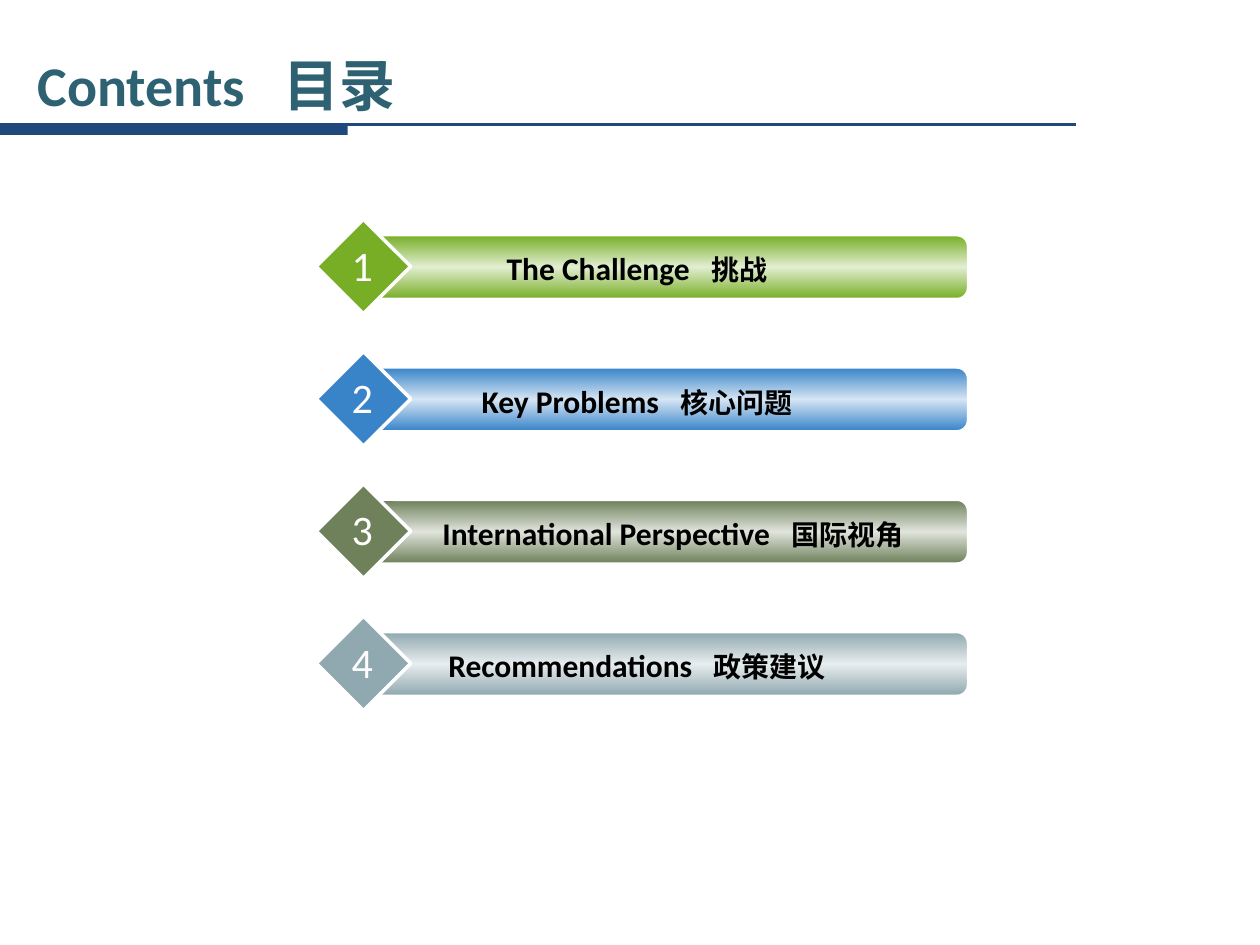
import copy

import pptx
import pptx.dml.color
import pptx.enum.shapes
import pptx.enum.text
import pptx.oxml.ns
import pptx.util
from pptx.util import Inches

SHAPE = pptx.enum.shapes.MSO_SHAPE
ALIGN = pptx.enum.text.PP_ALIGN
FONT = "Calibri"

# Content: English, Chinese, colour key, label width
TITLE = ("Contents", "目录")
TOPICS = [
    ("The Challenge", "挑战", "green", 3.75),
    ("Key Problems", "核心问题", "blue", 3.75),
    ("International Perspective", "国际视角", "olive", 4.32),
    ("Recommendations", "政策建议", "grey", 3.75),
]
COLORS = {
    "white": "FFFFFF", "black": "000000", "title": "2E6272", "rule": "1F497D",
    "green": "77AE26", "green_light": "E2EED1",
    "blue": "3984C9", "blue_light": "D5E5F4",
    "olive": "6E815B", "olive_light": "E0E4DC",
    "grey": "90A8B0", "grey_light": "E7EDEE",
}
FIRST_TOP, PITCH = 1.74, 1.05


def color(key):
    return pptx.dml.color.RGBColor.from_string(COLORS[key])


def style_run(run, size, key, bold):
    run.font.name = FONT
    run.font.size = pptx.util.Pt(size)
    run.font.bold = bold
    run.font.color.rgb = color(key)


def add_label(shapes, box, pieces, key, bold=False, align=ALIGN.CENTER, wrap=True):
    label = shapes.add_textbox(*map(Inches, box))
    frame = label.text_frame
    frame.word_wrap = wrap
    paragraph = frame.paragraphs[0]
    paragraph.alignment = align
    for text, size in pieces:
        run = paragraph.add_run()
        run.text = text
        style_run(run, size, key, bold)
        if text == " ":  # widen the gap between the two languages
            run.font._element.set("spc", str(round(size * 45)))
    return frame


def bilingual(english, chinese, size, chinese_size):
    return [(english, size), (" ", size), (chinese, chinese_size)]


def add_block(shapes, preset, box, line_width):
    block = shapes.add_shape(preset, *map(Inches, box))
    block.shadow.inherit = False
    block.line.color.rgb = color("white")
    block.line.width = pptx.util.Pt(line_width)
    return block


def fill_gradient(shape, keys):
    shape.fill.gradient()
    shape.fill.gradient_angle = 90
    stop_list = shape._element.spPr.find(".//" + pptx.oxml.ns.qn("a:gsLst"))
    stop_list.append(copy.deepcopy(stop_list[0]))
    for i, (stop, key) in enumerate(zip(shape.fill.gradient_stops, keys)):
        stop.position = i / 2
        stop.color.rgb = color(key)


def add_topic(slide, number, topic):
    english, chinese, key, label_width = topic
    top = FIRST_TOP + (number - 1) * PITCH
    shapes = slide.shapes.add_group_shape().shapes
    bar = add_block(shapes, SHAPE.ROUNDED_RECTANGLE, (2.93, top + 0.13, 4.75, 0.5), 1)
    bar.adjustments[0] = 0.17
    fill_gradient(bar, (key, key + "_light", key))
    diamond = add_block(shapes, SHAPE.DIAMOND, (2.51, top, 0.75, 0.75), 2)
    diamond.fill.solid()
    diamond.fill.fore_color.rgb = color(key)
    add_label(shapes, (3.18, top + 0.19, label_width, 0.4),
              bilingual(english, chinese, 18, 16), "black", bold=True)
    add_label(shapes, (2.68, top + 0.11, 0.39, 0.5), [(str(number), 24)],
              "white", wrap=False)


def add_header(slide):
    rule = slide.shapes.add_connector(
        pptx.enum.shapes.MSO_CONNECTOR.STRAIGHT,
        Inches(0), Inches(0.99), Inches(8.54), Inches(0.99))
    rule.line.color.rgb = color("rule")
    rule.line.width = pptx.util.Pt(1.5)
    rule._element.spPr.append(pptx.oxml.parse_xml(
        "<a:effectLst %s/>" % pptx.oxml.ns.nsdecls("a")))
    accent = slide.shapes.add_shape(
        SHAPE.RECTANGLE, Inches(0), Inches(0.99), Inches(2.76), Inches(0.08))
    accent.shadow.inherit = False
    accent.fill.solid()
    accent.fill.fore_color.rgb = color("rule")
    accent.line.fill.background()
    title = add_label(slide.shapes, (0.2, 0.36, 8.42, 0.62),
                      bilingual(*TITLE, 32, 32), "title", bold=True, align=ALIGN.LEFT)
    title.vertical_anchor = pptx.enum.text.MSO_ANCHOR.MIDDLE


def main():
    deck = pptx.Presentation()
    deck.slide_width, deck.slide_height = Inches(10), Inches(7.5)
    slide = deck.slides.add_slide(deck.slide_layouts[6])
    add_header(slide)
    for number, topic in enumerate(TOPICS, start=1):
        add_topic(slide, number, topic)
    deck.save("out.pptx")


if __name__ == "__main__":
    main()
